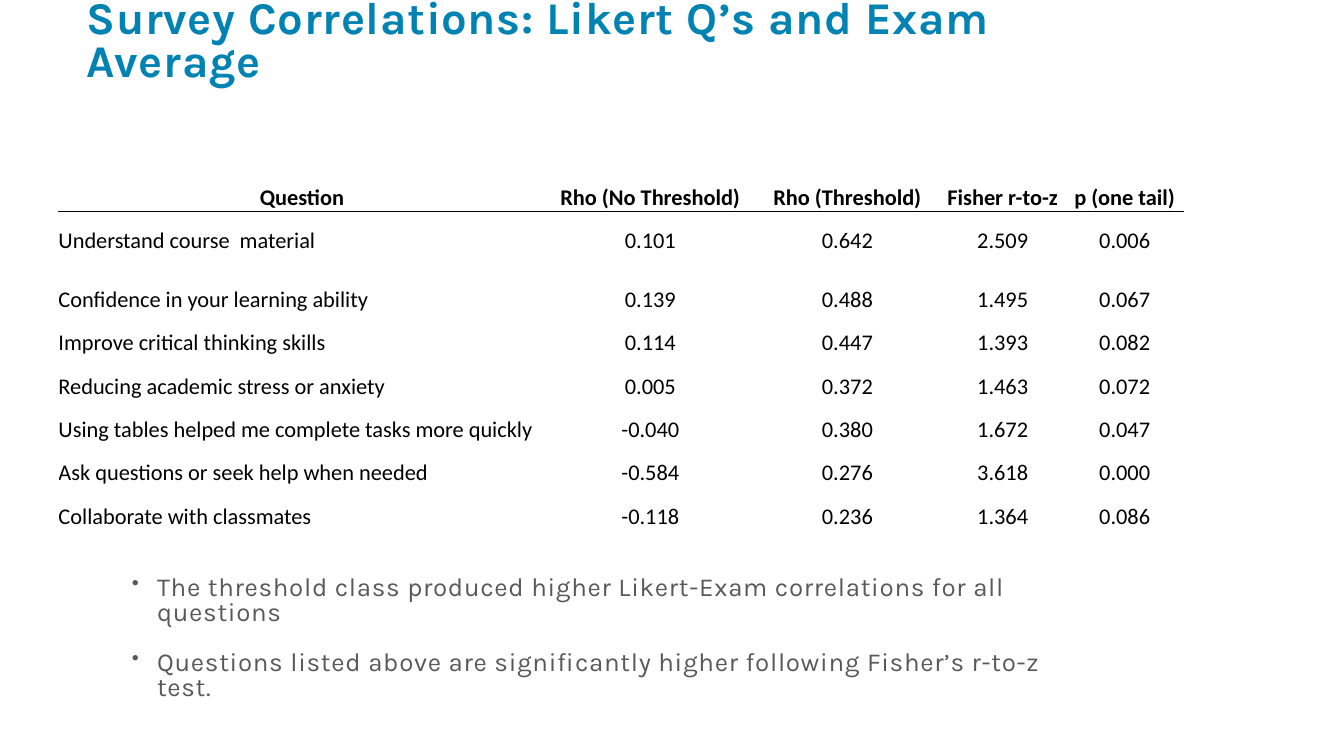
"""Build the slide on survey correlations between Likert questions and exam average."""
from dataclasses import dataclass

from lxml import etree
from pptx import Presentation
from pptx.dml.color import RGBColor
from pptx.enum.text import MSO_ANCHOR, PP_ALIGN
from pptx.oxml.ns import qn
from pptx.slide import Slide
from pptx.table import _Cell
from pptx.text.text import Font, _Paragraph
from pptx.util import Inches, Pt

LEFT, CENTER = PP_ALIGN.LEFT, PP_ALIGN.CENTER
TOP, BOTTOM = MSO_ANCHOR.TOP, MSO_ANCHOR.BOTTOM


@dataclass(frozen=True)
class TypeStyle:
    name: str
    size: float
    color: str
    bold: bool = False
    tracking: float = 0


@dataclass(frozen=True)
class Theme:
    title: TypeStyle = TypeStyle("Karla", 32.4, "0083B3", True, 0.5)
    header: TypeStyle = TypeStyle("Calibri", 16, "000000", True)
    body: TypeStyle = TypeStyle("Calibri", 16, "000000")
    finding: TypeStyle = TypeStyle("Karla", 18.5, "595959", False, 0.5)
    rule: str = "000000"
    rule_width: float = 0.5


@dataclass(frozen=True)
class TextBlock:
    left: float
    top: float
    width: float
    height: float
    paragraphs: tuple[str, ...]
    style: TypeStyle
    anchor: MSO_ANCHOR = TOP
    bulleted: bool = False


@dataclass(frozen=True)
class Correlation:
    question: str
    no_threshold: str
    threshold: str
    fisher: str
    p_value: str
    height: float = 0.43

    def texts(self) -> tuple[str, ...]:
        """Return the cell texts from left to right."""
        return (self.question, self.no_threshold, self.threshold, self.fisher, self.p_value)


THEME = Theme()
COLUMN_WIDTHS = (4.83, 2.08, 1.83, 1.25, 1.17)
CORRELATIONS = (
    Correlation("Question", "Rho (No Threshold)", "Rho (Threshold)", "Fisher r-to-z", "p (one tail)"),
    Correlation("Understand course  material", "0.101", "0.642", "2.509", "0.006"),
    Correlation("Confidence in your learning ability", "0.139", "0.488", "1.495", "0.067", 0.58),
    Correlation("Improve critical thinking skills", "0.114", "0.447", "1.393", "0.082"),
    Correlation("Reducing academic stress or anxiety", "0.005", "0.372", "1.463", "0.072"),
    Correlation("Using tables helped me complete tasks more quickly", "-0.040", "0.380", "1.672", "0.047"),
    Correlation("Ask questions or seek help when needed", "-0.584", "0.276", "3.618", "0.000"),
    Correlation("Collaborate with classmates", "-0.118", "0.236", "1.364", "0.086"),
)
TEXT_BLOCKS = (
    TextBlock(0.76, 0.08, 10.15, 0.83,
              ("Survey Correlations: Likert Q’s and Exam Average",), THEME.title, BOTTOM),
    TextBlock(1.16, 5.67, 9.5, 0.92,
              ("The threshold class produced higher Likert-Exam correlations for all questions",
               "Questions listed above are significantly higher following Fisher’s r-to-z test."),
              THEME.finding, bulleted=True),
)


def apply_style(font: Font, style: TypeStyle) -> None:
    """Set typeface, size, weight and colour on a font."""
    font.name = style.name
    font.size = Pt(style.size)
    font.bold = style.bold
    font.color.rgb = RGBColor.from_string(style.color)


def add_bullet(para: _Paragraph, color: str) -> None:
    """Give a paragraph a hanging round bullet."""
    properties = para._p.get_or_add_pPr()
    properties.set("marL", str(Inches(0.3)))
    properties.set("indent", str(Inches(-0.25)))
    bullet_color = etree.SubElement(properties, qn("a:buClr"))
    etree.SubElement(bullet_color, qn("a:srgbClr"), val=color)
    etree.SubElement(properties, qn("a:buSzPct"), val="80000")
    etree.SubElement(properties, qn("a:buChar"), char="•")


def add_text_block(page: Slide, block: TextBlock) -> None:
    """Draw a wrapped text box with tight line spacing."""
    box = page.shapes.add_textbox(
        Inches(block.left), Inches(block.top), Inches(block.width), Inches(block.height))
    frame = box.text_frame
    frame.word_wrap = True
    frame.vertical_anchor = block.anchor
    for index, text in enumerate(block.paragraphs):
        para = frame.add_paragraph() if index else frame.paragraphs[0]
        if block.bulleted:
            add_bullet(para, block.style.color)
        para.line_spacing = 0.8
        if index:
            para.space_before = Pt(18)
        apply_style(para.font, block.style)
        span = para.add_run()
        span.text = text
        span.font._element.set("spc", str(round(block.style.tracking * 100)))


def add_rule(cell: _Cell, edge: str) -> None:
    """Draw a thin border along one edge of a cell."""
    line = etree.Element(qn(f"a:{edge}"), w=str(Pt(THEME.rule_width)))
    fill = etree.SubElement(line, qn("a:solidFill"))
    etree.SubElement(fill, qn("a:srgbClr"), val=THEME.rule)
    cell._tc.get_or_add_tcPr().insert(0, line)


def fill_cell(cell: _Cell, text: str, style: TypeStyle, alignment: PP_ALIGN) -> None:
    """Write a bottom-anchored cell without margins or fill."""
    cell.fill.background()
    cell.margin_left = cell.margin_right = cell.margin_top = cell.margin_bottom = 0
    cell.vertical_anchor = BOTTOM
    cell.text = text
    para = cell.text_frame.paragraphs[0]
    para.alignment = alignment
    apply_style(para.font, style)


def add_correlation_table(page: Slide) -> None:
    """Draw the correlations with a rule under the header row."""
    table = page.shapes.add_table(
        len(CORRELATIONS), len(COLUMN_WIDTHS), Inches(0.58), Inches(1.67),
        Inches(sum(COLUMN_WIDTHS)), Inches(sum(row.height for row in CORRELATIONS))).table
    table.first_row = table.horz_banding = False
    for column, width in zip(table.columns, COLUMN_WIDTHS):
        column.width = Inches(width)
    for row_index, correlation in enumerate(CORRELATIONS):
        table.rows[row_index].height = Inches(correlation.height)
        style = THEME.body if row_index else THEME.header
        for column_index, text in enumerate(correlation.texts()):
            cell = table.cell(row_index, column_index)
            fill_cell(cell, text, style, LEFT if row_index and not column_index else CENTER)
            if row_index < 2:
                add_rule(cell, "lnT" if row_index else "lnB")


def main() -> None:
    """Build and save the deck."""
    deck = Presentation()
    deck.slide_width, deck.slide_height = Inches(13.33), Inches(7.5)
    page = deck.slides.add_slide(deck.slide_layouts[6])
    for block in TEXT_BLOCKS:
        add_text_block(page, block)
    add_correlation_table(page)
    deck.save("out.pptx")


if __name__ == "__main__":
    main()
